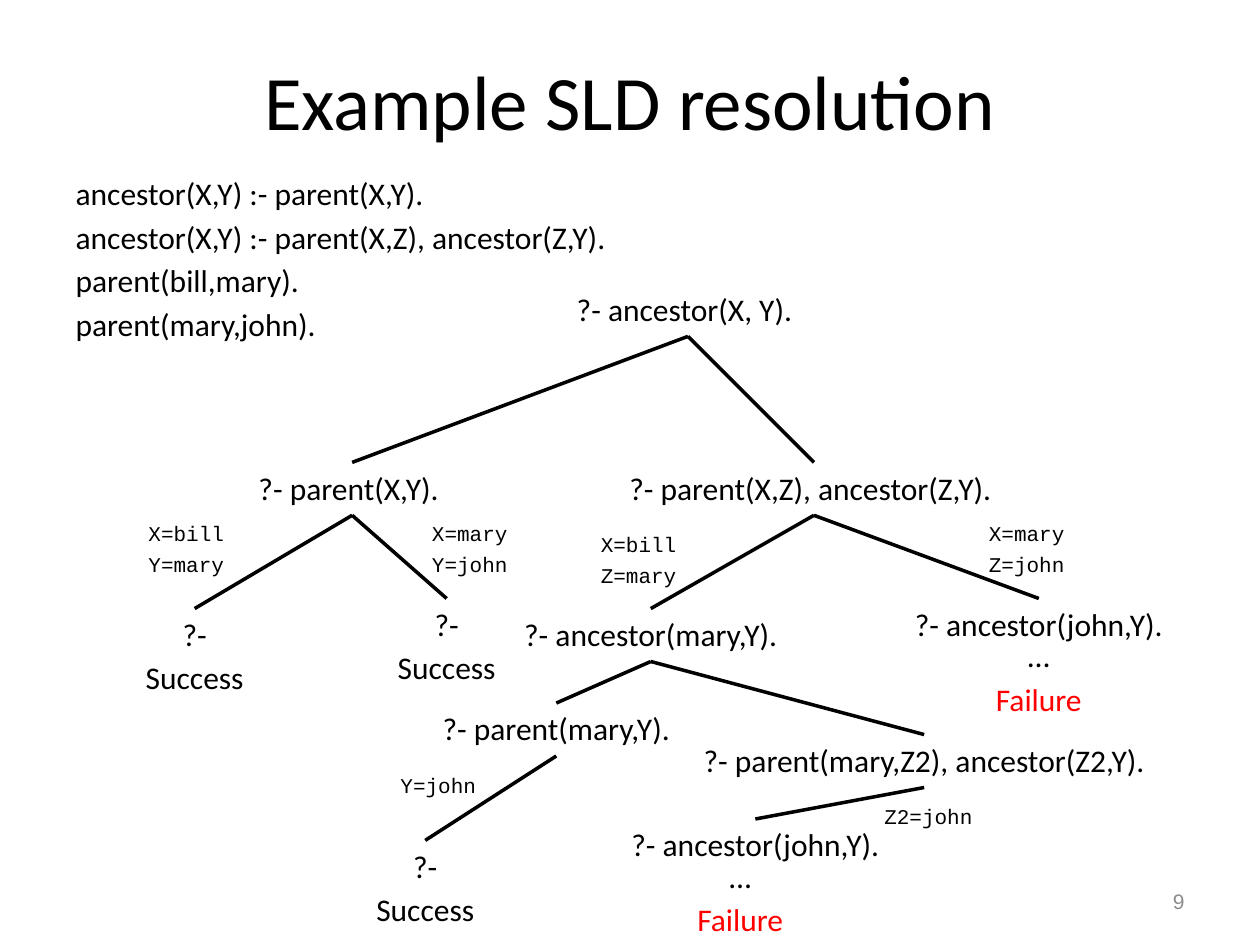
"""Build a slide that shows an SLD resolution tree."""
import pptx
import pptx.dml.color
import pptx.enum.shapes
import pptx.enum.text
import pptx.oxml
import pptx.oxml.ns
import pptx.util

Inches = pptx.util.Inches
Pt = pptx.util.Pt
ALIGN = pptx.enum.text.PP_ALIGN
ANCHOR = pptx.enum.text.MSO_ANCHOR
COLORS = {"ink": "000000", "paper": "FFFFFF", "alert": "FF0000", "pale": "8C8C8C"}
FONTS = {
    "title": {"name": "Calibri", "size": Pt(44)},
    "text": {"name": "Calibri", "size": Pt(18)},
    "code": {"name": "Courier New", "size": Pt(12)},
    "page": {"name": "Arial", "size": Pt(12)},
}
FRAME = {
    "word_wrap": True,
    "auto_size": pptx.enum.text.MSO_AUTO_SIZE.NONE,
    "vertical_anchor": ANCHOR.TOP,
}

CLAUSES = [
    "ancestor(X,Y) :- parent(X,Y).",
    "ancestor(X,Y) :- parent(X,Z), ancestor(Z,Y).",
    "parent(bill,mary).",
    "parent(mary,john).",
]
LABELS = [
    ((6.92, 6.33, 1, 0.67), ["Z2=john"]),
    ((3.33, 4.08, 1.25, 0.75), ["X=mary", "Y=john"]),
    ((3.08, 6.08, 0.92, 0.42), ["Y=john"]),
    ((1.08, 4.08, 1, 0.67), ["X=bill", "Y=mary"]),
    ((4.67, 4.17, 1, 0.67), ["X=bill", "Z=mary"]),
    ((7.75, 4.08, 1, 0.67), ["X=mary", "Z=john"]),
]
WIN = ["?-", "Success"]
GOALS = {
    "root": ((3.67, 2.25, 3.58, 0.42), ["?- ancestor(X, Y). "]),
    "left": ((1.67, 3.67, 2.25, 0.42), ["?- parent(X,Y). "]),
    "right": ((4.42, 3.67, 4.08, 0.42), ["?- parent(X,Z), ancestor(Z,Y). "]),
    "bill": ((0.92, 4.83, 1.25, 0.83), WIN),
    "mary": ((2.92, 4.75, 1.25, 0.83), WIN),
    "next": ((3.75, 4.83, 2.83, 0.42), ["?- ancestor(mary,Y)."]),
    "john": ((6.83, 4.75, 2.83, 0.42), ["?- ancestor(john,Y)."]),
    "fact": ((3, 5.58, 2.83, 0.42), ["?- parent(mary,Y)."]),
    "rule": ((5.42, 5.83, 3.83, 0.42), ["?- parent(mary,Z2), ancestor(Z2,Y)."]),
    "done": ((2.75, 6.67, 1.25, 0.83), WIN),
    "last": ((4.58, 6.5, 2.83, 0.42), ["?- ancestor(john,Y)."]),
}
TREE = {
    "root": ["left", "right"],
    "left": ["bill", "mary"],
    "right": ["next", "john"],
    "next": ["fact", "rule"],
    "fact": ["done"],
    "rule": ["last"],
}
DEAD = [(5.25, 6.75, 1.25, 0.75), (7.58, 5, 1.33, 0.83)]


def assign(item, values):
    """Set each named value on the item."""
    for name, value in values.items():
        setattr(item, name, value)


class Slide:
    """Hold the style and the current slide."""

    def __init__(self, deck):
        """Add a slide with a title and a body."""
        self.slide = deck.slides.add_slide(deck.slide_layouts[1])
        self.shapes = self.slide.shapes

    def paint(self, color):
        """Return a palette colour."""
        return pptx.dml.color.RGBColor.from_string(COLORS[color])

    def letter(self, shape, lines, font="text", align=ALIGN.LEFT, hang=True,
               color="ink", **extra):
        """Fill a shape with styled lines."""
        frame = shape.text_frame
        assign(frame, {**FRAME, **extra})
        frame.text = "\n".join(lines)
        for para in frame.paragraphs:
            assign(para, {"alignment": align, "space_before": Pt(3.4 if hang else 0)})
            assign(para.runs[0].font, FONTS[font])
            para.runs[0].font.color.rgb = self.paint(color)
            if hang:
                props = para._p.get_or_add_pPr()
                props.set("marL", str(Inches(0.38)))
                props.set("indent", str(Inches(-0.38)))
                props.append(pptx.oxml.parse_xml(
                    "<a:buNone %s/>" % pptx.oxml.ns.nsdecls("a")))
        return shape

    def hold(self, shape, box, lines, **style):
        """Move a placeholder and fill it."""
        names = ("left", "top", "width", "height")
        assign(shape, dict(zip(names, map(Inches, box))))
        return self.letter(shape, lines, **style)

    def text(self, box, lines, **style):
        """Add a text box."""
        return self.letter(self.shapes.add_textbox(*map(Inches, box)), lines, **style)

    def label(self, box, lines):
        """Add a white box with variable bindings."""
        kind = pptx.enum.shapes.MSO_SHAPE.RECTANGLE
        shape = self.shapes.add_shape(kind, *map(Inches, box))
        shape.shadow.inherit = False
        shape.fill.solid()
        shape.fill.fore_color.rgb = self.paint("paper")
        shape.line.fill.background()
        self.letter(shape, lines, font="code")

    def branch(self, start, end):
        """Join the bottom of one goal to the top of another."""
        kind = pptx.enum.shapes.MSO_CONNECTOR.STRAIGHT
        line = self.shapes.add_connector(kind, 0, 0, 0, 0)
        line.begin_connect(start, 2)
        line.end_connect(end, 0)
        line.line.color.rgb = self.paint("ink")
        line.line.width = Pt(0)
        line._element.spPr.append(pptx.oxml.parse_xml(
            "<a:effectLst %s/>" % pptx.oxml.ns.nsdecls("a")))


def main():
    """Build and save the deck."""
    deck = pptx.Presentation()
    assign(deck, {"slide_width": Inches(10), "slide_height": Inches(7.5)})
    page = Slide(deck)
    for box, lines in LABELS:
        page.label(box, lines)
    page.hold(page.shapes.title, (0.5, 0.17, 9, 1.25), ["Example SLD resolution"],
              font="title", align=ALIGN.CENTER, hang=False,
              vertical_anchor=ANCHOR.MIDDLE)
    page.hold(page.slide.placeholders[1], (0.5, 1.33, 6.58, 1.49), CLAUSES)
    goals = {name: page.text(box, lines, align=ALIGN.CENTER)
             for name, (box, lines) in GOALS.items()}
    for start, ends in TREE.items():
        for end in ends:
            page.branch(goals[start], goals[end])
    for box in DEAD:
        shape = page.text(box, ["…", "Failure"], align=ALIGN.CENTER)
        shape.text_frame.paragraphs[1].runs[0].font.color.rgb = page.paint("alert")
    page.text((7.17, 6.95, 2.33, 0.4), ["9"], font="page", align=ALIGN.RIGHT,
              hang=False, color="pale", vertical_anchor=ANCHOR.MIDDLE)
    deck.save("out.pptx")


if __name__ == "__main__":
    main()
